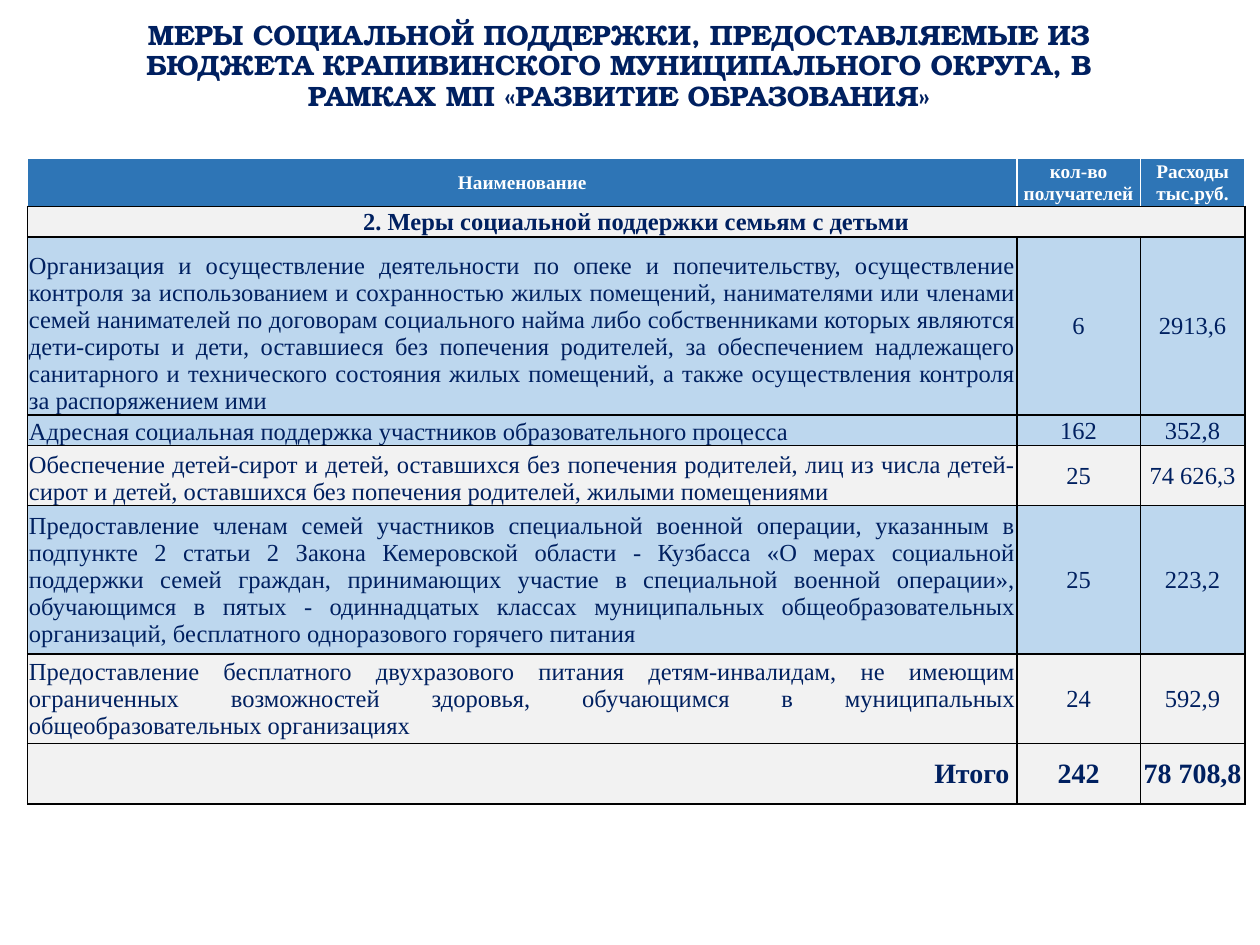
from dataclasses import dataclass

from lxml import etree
from pptx import Presentation
from pptx import util as u
from pptx.dml.color import RGBColor
from pptx.enum import text
from pptx.oxml import ns


@dataclass(frozen=True)
class Theme:
    navy: str = "002060"
    blue: str = "2E75B6"
    sky: str = "BDD7EE"
    pale: str = "F2F2F2"
    white: str = "FFFFFF"
    black: str = "000000"
    serif: str = "Times New Roman"
    display: str = "TeX Gyre Bonum"
    big: int = 16
    body: int = 14
    small: int = 11


T = Theme()
MID, LOW = text.MSO_ANCHOR.MIDDLE, text.MSO_ANCHOR.BOTTOM
LEFT, JUST = text.PP_ALIGN.RIGHT, text.PP_ALIGN.JUSTIFY
RIGHT, CENTER = text.PP_ALIGN.RIGHT, text.PP_ALIGN.CENTER

TITLE = ("МЕРЫ СОЦИАЛЬНОЙ ПОДДЕРЖКИ, ПРЕДОСТАВЛЯЕМЫЕ ИЗ БЮДЖЕТА "
         "КРАПИВИНСКОГО МУНИЦИПАЛЬНОГО ОКРУГА, В РАМКАХ МП «РАЗВИТИЕ ОБРАЗОВАНИЯ»")
HEADS = ("Наименование", "кол-во получателей", "Расходы тыс.руб.")
GROUP = "2. Меры социальной поддержки семьям с детьми"
ITEMS = (
    ("Организация и осуществление деятельности по опеке и попечительству, "
     "осуществление контроля за использованием и сохранностью жилых помещений, "
     "нанимателями или членами семей нанимателей по договорам социального найма "
     "либо собственниками которых являются дети-сироты и дети, оставшиеся без "
     "попечения родителей, за обеспечением надлежащего санитарного и технического "
     "состояния жилых помещений, а также осуществления контроля за распоряжением ими",
     "6", "2913,6", T.sky, LOW),
    ("Адресная социальная поддержка участников образовательного процесса",
     "162", "352,8", T.sky, LOW),
    ("Обеспечение детей-сирот и детей, оставшихся без попечения родителей, лиц из "
     "числа детей-сирот и детей, оставшихся без попечения родителей, жилыми помещениями",
     "25", "74 626,3", T.pale, LOW),
    ("Предоставление членам семей участников специальной военной операции, указанным "
     "в подпункте 2 статьи 2 Закона Кемеровской области - Кузбасса «О мерах социальной "
     "поддержки семей граждан, принимающих участие в специальной военной операции», "
     "обучающимся в пятых - одиннадцатых классах муниципальных общеобразовательных "
     "организаций, бесплатного одноразового горячего питания",
     "25", "223,2", T.sky, MID),
    ("Предоставление бесплатного двухразового питания детям-инвалидам, не имеющим "
     "ограниченных возможностей здоровья, обучающимся в муниципальных "
     "общеобразовательных организациях",
     "24", "592,9", T.pale, MID),
)
TOTAL = ("Итого", "242", "78 708,8")
COLS = (7.85, 0.98, 0.83)
ROWS = (0.34, 0.22, 1.41, 0.22, 0.44, 1.08, 0.65, 0.48)


def write(frame, words, size, color, bold, align, face=T.serif):
    frame.text = words
    para = frame.paragraphs[0]
    para.alignment = align
    for run in para.runs:
        font = run.font
        font.name, font.size, font.bold = face, u.Pt(size), bold
        font.color.rgb = RGBColor.from_string(color)
    return para


def edge(cell, side, color):
    line = etree.SubElement(cell._tc.get_or_add_tcPr(), ns.qn(f"a:ln{side}"),
                            w=str(u.Pt(1)))
    fill = etree.SubElement(line, ns.qn("a:solidFill"))
    etree.SubElement(fill, ns.qn("a:srgbClr"), val=color)


def paint(cell, fill, rim=T.black):
    for side in "LRT":
        edge(cell, side, rim)
    edge(cell, "B", T.black)
    cell.fill.solid()
    cell.fill.fore_color.rgb = RGBColor.from_string(fill)
    cell.margin_left = cell.margin_right = cell.margin_top = u.Inches(0.01)
    cell.margin_bottom = 0
    cell.vertical_anchor = MID


def add_title(slide, box):
    shape = slide.shapes.add_textbox(*map(u.Inches, box))
    shape.fill.solid()
    shape.fill.fore_color.rgb = RGBColor.from_string(T.white)
    frame = shape.text_frame
    frame.word_wrap = True
    frame.vertical_anchor = MID
    para = write(frame, TITLE, T.big, T.navy, True, CENTER, T.display)
    para.line_spacing = 0.9


def add_grid(slide, box):
    frame = slide.shapes.add_table(len(ROWS), len(COLS), *map(u.Inches, box))
    table = frame.table
    for col, width in zip(table.columns, COLS):
        col.width = u.Inches(width)
    for row, height in zip(table.rows, ROWS):
        row.height = u.Inches(height)

    def fill_row(index, words, fill, size, color, bold, first, rim=T.black):
        for col, word in enumerate(words):
            cell = table.cell(index, col)
            paint(cell, fill, rim)
            write(cell.text_frame, word, size, color, bold,
                  CENTER if col else first)

    fill_row(0, HEADS, T.blue, T.small, T.white, True, CENTER, T.white)
    fill_row(1, (GROUP, "", ""), T.pale, T.body, T.navy, True, CENTER)
    table.cell(1, 0).merge(table.cell(1, 2))
    for index, (*words, fill, anchor) in enumerate(ITEMS, 2):
        fill_row(index, words, fill, T.body, T.navy, False, JUST)
        table.cell(index, 0).vertical_anchor = anchor
    last = len(ROWS) - 1
    fill_row(last, TOTAL, T.pale, T.big, T.navy, True, RIGHT)
    table.cell(last, 0).margin_right = u.Inches(0.06)


def main():
    deck = Presentation()
    deck.slide_width, deck.slide_height = u.Inches(10), u.Inches(7.5)
    slide = deck.slides.add_slide(deck.slide_layouts[6])
    add_title(slide, (0.83, 0, 8.17, 1.06))
    add_grid(slide, (0.22, 1.26, sum(COLS), sum(ROWS)))
    deck.save("out.pptx")


if __name__ == "__main__":
    main()
